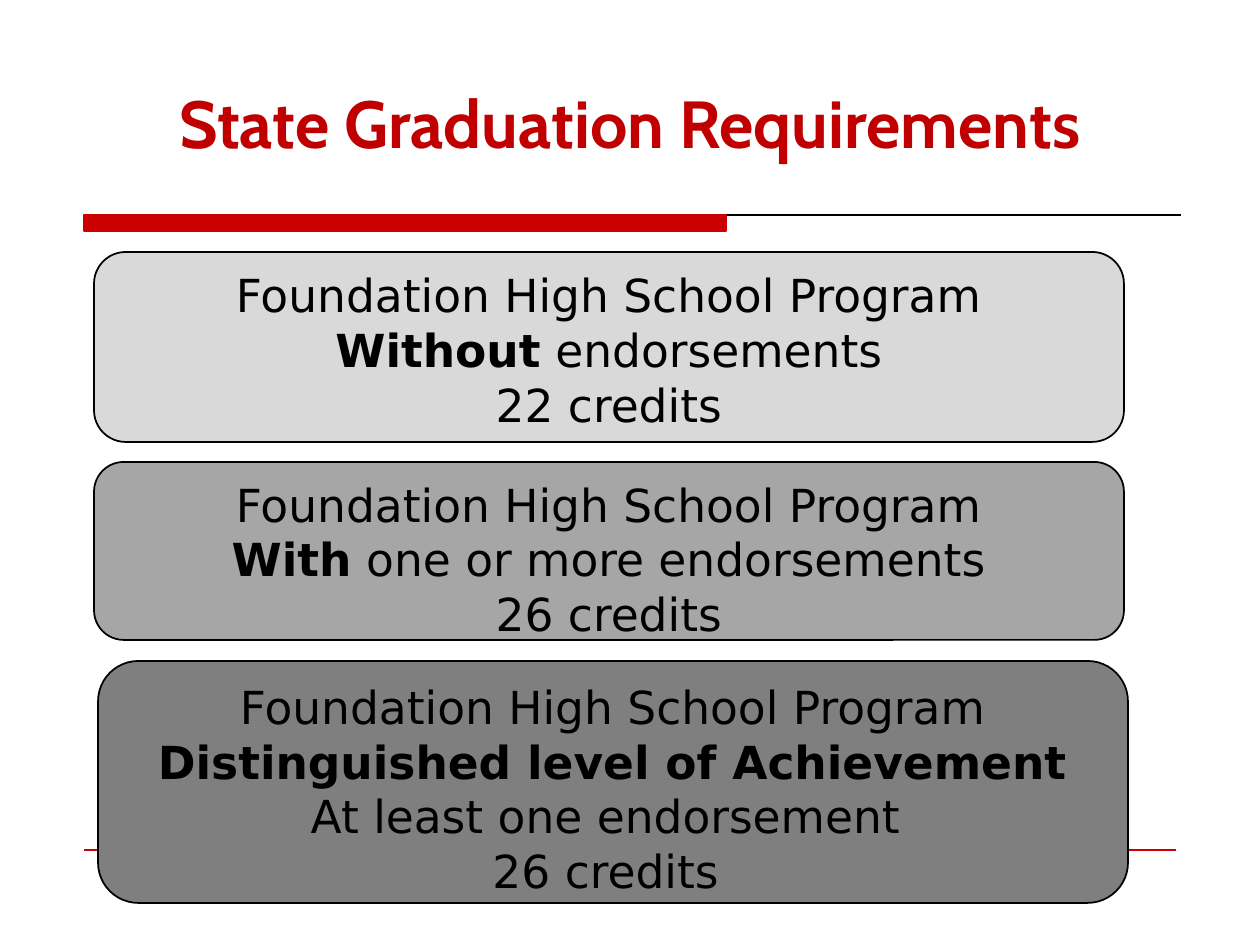
"""Build the State Graduation Requirements slide."""
import pptx
import pptx.util
import pptx.dml.color
import pptx.enum.shapes
import pptx.enum.text
import pptx.oxml.ns
from lxml import etree

RGB = pptx.dml.color.RGBColor
RED = RGB(0xCC, 0x00, 0x00)
TITLE_RED = RGB(0xC0, 0x00, 0x00)
BLACK = RGB(0x00, 0x00, 0x00)
LIGHT = RGB(0xD9, 0xD9, 0xD9)
MEDIUM = RGB(0xA6, 0xA6, 0xA6)
DARK = RGB(0x7F, 0x7F, 0x7F)
SHAPE = pptx.enum.shapes.MSO_SHAPE
ANCHOR = pptx.enum.text.MSO_ANCHOR
CENTER = pptx.enum.text.PP_ALIGN.CENTER


def px(*lengths):
    return [pptx.util.Emu(round(n * 914400 / 126)) for n in lengths]


prs = pptx.Presentation()
prs.slide_width, prs.slide_height = px(1260, 945)
s = prs.slides.add_slide(prs.slide_layouts[5])

title = s.shapes.title
title.left, title.top, title.width, title.height = px(79, 0, 1102, 168)
tf = title.text_frame
tf.text = "State Graduation Requirements"
tf.word_wrap = True
tf.vertical_anchor = ANCHOR.BOTTOM
p = tf.paragraphs[0]
p.alignment = CENTER
font = p.runs[0].font
font.name, font.size, font.bold = "Cabin", pptx.util.Pt(38), True
font.color.rgb = TITLE_RED

for left, right, y, color in [(84, 1181, 215, BLACK), (84, 1176, 850, RED)]:
    rule = s.shapes.add_connector(
        pptx.enum.shapes.MSO_CONNECTOR.STRAIGHT, *px(left, y, right, y))
    rule.line.color.rgb = color
    rule.line.width = pptx.util.Pt(0.75)
    etree.SubElement(rule._element.spPr, pptx.oxml.ns.qn("a:effectLst"))

bar = s.shapes.add_shape(SHAPE.RECTANGLE, *px(84, 215, 642, 16))
bar.shadow.inherit = False
bar.fill.solid()
bar.fill.fore_color.rgb = RED
bar.line.color.rgb = RED
bar.line.width = pptx.util.Pt(0.75)

PROGRAM = "Foundation High School Program"
programs = [
    (94, 252, 190, LIGHT,
     [[PROGRAM], ["Without", " endorsements"], ["22 credits"]]),
    (94, 462, 178, MEDIUM,
     [[PROGRAM], ["With", " one or more endorsements"], ["26 credits"]]),
    (98, 661, 242, DARK,
     [[PROGRAM], ["Distinguished level of Achievement"],
      ["At least one endorsement "], ["26 credits "]]),
]
for left, top, height, color, lines in programs:
    sp = s.shapes.add_shape(
        SHAPE.ROUNDED_RECTANGLE, *px(left, top, 1030, height))
    sp.shadow.inherit = False
    sp.fill.solid()
    sp.fill.fore_color.rgb = color
    sp.line.color.rgb = BLACK
    sp.line.width = pptx.util.Pt(1)
    tf = sp.text_frame
    tf.word_wrap = True
    tf.vertical_anchor = ANCHOR.TOP
    for i, texts in enumerate(lines):
        p = tf.add_paragraph() if i else tf.paragraphs[0]
        p.alignment = CENTER
        for j, text in enumerate(texts):
            r = p.add_run()
            r.text = text
            r.font.name, r.font.size = "DejaVu Sans", pptx.util.Pt(26)
            r.font.bold = i == 1 and j == 0
            r.font.color.rgb = BLACK

prs.save("out.pptx")
